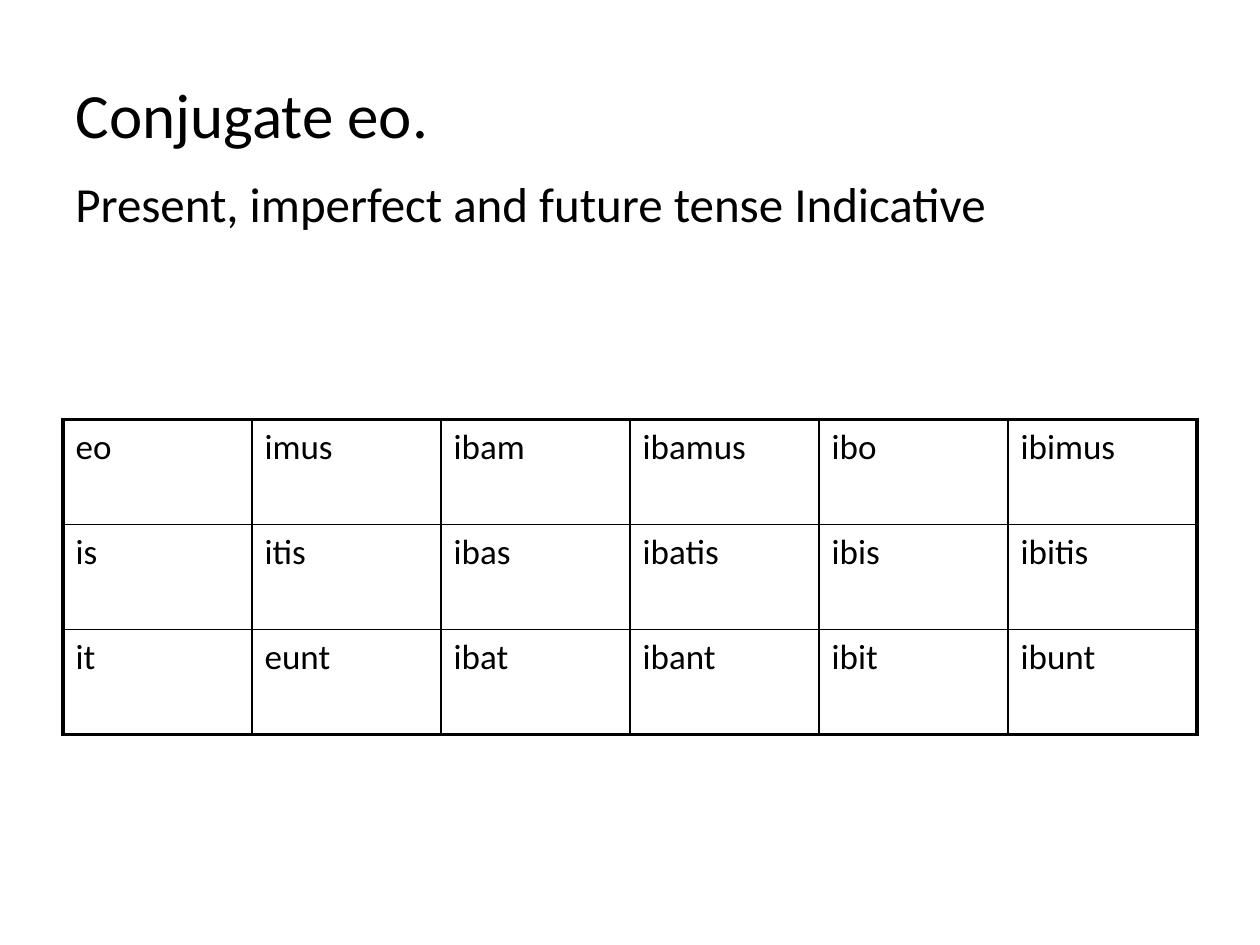
from lxml.etree import SubElement
from pptx import Presentation
from pptx.dml.color import RGBColor
from pptx.enum.text import MSO_ANCHOR as Anchor, PP_ALIGN as Align
from pptx.oxml.ns import qn
from pptx.util import Inches, Pt

BLACK = RGBColor(0, 0, 0)
WHITE = RGBColor(255, 255, 255)
FONT = "Calibri"
THIN, THICK = Pt(1), Pt(2.25)

# Each tense takes two columns: singular, plural
FORMS = [
    ["eo", "imus", "ibam", "ibamus", "ibo", "ibimus"],
    ["is", "itis", "ibas", "ibatis", "ibis", "ibitis"],
    ["it", "eunt", "ibat", "ibant", "ibit", "ibunt"],
]


def write_text(frame, text, size):
    frame.word_wrap = True
    para = frame.paragraphs[0]
    para.alignment = Align.LEFT
    span = para.add_run()
    span.text = text
    style = {"name": FONT, "size": Pt(size), "bold": False}
    for name, value in style.items():
        setattr(span.font, name, value)
    span.font.color.rgb = BLACK


def add_title(page, text):
    title = page.shapes.title
    place = {"left": 0.5, "top": 0.08, "width": 7.42, "height": 1.17}
    for name, value in place.items():
        setattr(title, name, Inches(value))
    title.text_frame.vertical_anchor = Anchor.BOTTOM
    write_text(title.text_frame, text, 36)


def add_subtitle(page, text):
    box = page.shapes.add_textbox(Inches(0.5), Inches(1.33), Inches(9), Inches(1.25))
    write_text(box.text_frame, text, 28)


def set_borders(cell, widths):
    """Draw the cell's sides; the schema wants them in the order L, R, T, B."""
    properties = cell._tc.get_or_add_tcPr()
    for side, width in widths.items():
        line = SubElement(properties, qn(f"a:ln{side}"), w=str(width))
        fill = SubElement(line, qn("a:solidFill"))
        SubElement(fill, qn("a:srgbClr"), val=str(BLACK))


def add_forms_table(page, forms):
    row_count, column_count = len(forms), len(forms[0])
    table = page.shapes.add_table(
        row_count, column_count, Inches(0.5), Inches(3.33), Inches(9), Inches(2.5)
    ).table
    for i, row in enumerate(forms):
        for j, form in enumerate(row):
            cell = table.cell(i, j)
            write_text(cell.text_frame, form, 20)
            # Thick outer frame, thin inner grid
            set_borders(cell, {
                "L": THICK if j == 0 else THIN,
                "R": THICK if j == column_count - 1 else THIN,
                "T": THICK if i == 0 else THIN,
                "B": THICK if i == row_count - 1 else THIN,
            })
            cell.fill.background()


def main():
    deck = Presentation()
    deck.slide_width, deck.slide_height = Inches(10), Inches(7.5)
    page = deck.slides.add_slide(deck.slide_layouts[5])
    page.background.fill.solid()
    page.background.fill.fore_color.rgb = WHITE

    # Heading
    add_title(page, "Conjugate eo.")
    add_subtitle(page, "Present, imperfect and future tense Indicative")

    # Verb forms
    add_forms_table(page, FORMS)

    deck.save("out.pptx")


if __name__ == "__main__":
    main()
